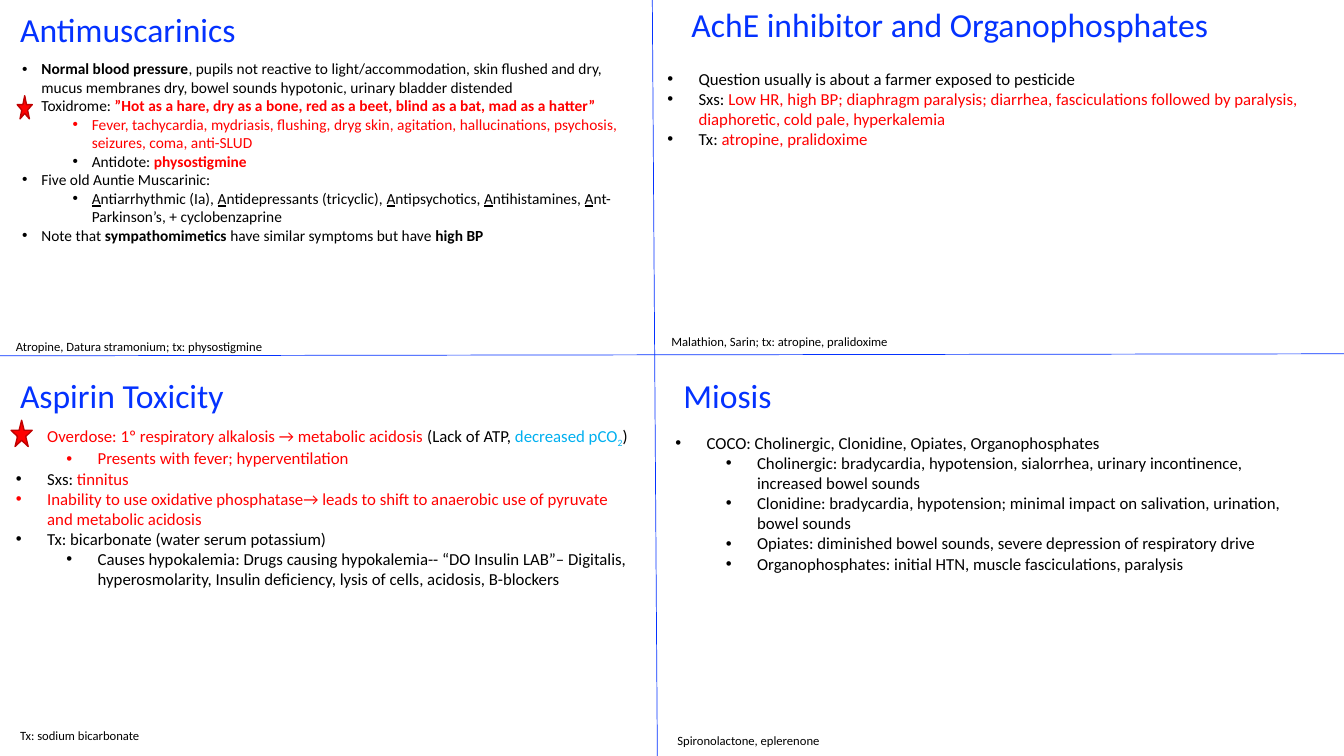
"""Build a four-quadrant toxicology review slide."""
import pptx
import pptx.dml.color
import pptx.enum.shapes
import pptx.enum.text
import pptx.oxml
import pptx.oxml.ns
import pptx.util
from lxml import etree
from pptx.util import Inches

FONT = "Calibri"
BLUE, BLACK, RED, DARK_RED, SKY = "0432FF", "000000", "FF0000", "C00000", "00B0F0"
STYLES = {
    "plain": {},
    "bold": {"bold": True},
    "underline": {"underline": True},
    "red": {"color": RED},
    "red bold": {"color": RED, "bold": True},
    "sky": {"color": SKY},
    "sky subscript": {"color": SKY, "baseline": -25000},
}

ANTIMUSCARINICS = [
    (0, [("Normal blood pressure", "bold"),
         (", pupils not reactive to light/accommodation, skin flushed and dry, mucus membranes dry, "
          "bowel sounds hypotonic, urinary bladder distended", "plain")]),
    (0, [("Toxidrome: ", "plain"),
         ("”Hot as a hare, dry as a bone, red as a beet, blind as a bat, mad as a hatter”", "red bold")]),
    (1, [("Fever, tachycardia, mydriasis, flushing, dryg skin, agitation, hallucinations, psychosis, "
          "seizures, coma, anti-SLUD", "red")]),
    (1, [("Antidote: ", "plain"), ("physostigmine", "red bold")]),
    (0, [("Five old Auntie Muscarinic:", "plain")]),
    (1, [("A", "underline"), ("ntiarrhythmic (Ia), ", "plain"),
         ("A", "underline"), ("ntidepressants (tricyclic), ", "plain"),
         ("A", "underline"), ("ntipsychotics, ", "plain"),
         ("A", "underline"), ("ntihistamines, ", "plain"),
         ("A", "underline"), ("nt-Parkinson’s, + cyclobenzaprine", "plain")]),
    (0, [("Note that ", "plain"), ("sympathomimetics", "bold"),
         (" have similar symptoms but have ", "plain"), ("high BP", "bold")]),
]
ORGANOPHOSPHATES = [
    (0, [("Question usually is about a farmer exposed to pesticide", "plain")]),
    (0, [("Sxs: ", "plain"),
         ("Low HR, high BP; diaphragm paralysis; diarrhea, fasciculations followed by paralysis, "
          "diaphoretic, cold pale, hyperkalemia", "red")]),
    (0, [("Tx: ", "plain"), ("atropine, pralidoxime", "red")]),
]
ASPIRIN = [
    (0, [("Overdose: 1º respiratory alkalosis → metabolic acidosis ", "red"), ("(Lack of ATP, ", "plain"),
         ("decreased pCO", "sky"), ("2", "sky subscript"), (")", "plain")]),
    (1, [("Presents with fever; hyperventilation", "red")]),
    (0, [("Sxs: ", "plain"), ("tinnitus", "red")]),
    (0, [("Inability to use oxidative phosphatase→ leads to shift to anaerobic use of pyruvate "
          "and metabolic acidosis", "red")]),
    (0, [("Tx: bicarbonate (water serum potassium)", "plain")]),
    (1, [("Causes hypokalemia: Drugs causing hypokalemia-- “DO Insulin LAB”– Digitalis, hyperosmolarity, "
          "Insulin deficiency, lysis of cells, acidosis, B-blockers", "plain")]),
]
MIOSIS = [
    (0, [("COCO: Cholinergic, Clonidine, Opiates, Organophosphates", "plain")]),
    (1, [("Cholinergic: bradycardia, hypotension, sialorrhea, urinary incontinence, "
          "increased bowel sounds", "plain")]),
    (1, [("Clonidine: bradycardia, hypotension; minimal impact on salivation, urination, "
          "bowel sounds", "plain")]),
    (1, [("Opiates: diminished bowel sounds, severe depression of respiratory drive", "plain")]),
    (1, [("Organophosphates: initial HTN, muscle fasciculations, paralysis", "plain")]),
]

QUADRANTS = [
    {"title": ("Antimuscarinics", (0.1, 0.04, 5.81, 0.5)),
     "list": (ANTIMUSCARINICS, (0.12, 0.54, 6.26, 2.14)), "size": 11, "hanging": 0.19,
     "footer": ("Atropine, Datura stramonium; tx: physostigmine", (0.06, 3.31, 6.24, 0.25))},
    {"title": ("AchE inhibitor and Organophosphates", (6.76, -0.01, 6.31, 0.5)),
     "list": (ORGANOPHOSPHATES, (6.52, 0.63, 6.82, 0.91)), "size": 12, "hanging": 0.31,
     "footer": ("Malathion, Sarin; tx: atropine, pralidoxime", (6.56, 3.26, 4.47, 0.25))},
    {"title": ("Aspirin Toxicity", (0.1, 3.67, 3.62, 0.5)),
     "list": (ASPIRIN, (0.06, 4.17, 6.32, 2.12)), "size": 12, "hanging": 0.31,
     "footer": ("Tx: sodium bicarbonate", (0.1, 7.17, 2.49, 0.25))},
    {"title": ("Miosis", (6.68, 3.67, 3.8, 0.5)),
     "list": (MIOSIS, (6.6, 4.24, 6.35, 1.72)), "size": 12, "hanging": 0.31,
     "footer": ("Spironolactone, eplerenone", (6.62, 7.22, 2.3, 0.25))},
]
DIVIDERS = [(6.47, 0, 6.52, 7.5), (0, 3.53, 13.33, 3.51)]
STARS = [(0.17, 0.95, 0.15, 0.23), (0.11, 4.17, 0.21, 0.26)]


def rgb(color):
    return pptx.dml.color.RGBColor.from_string(color)


def place_text(slide, box, placeholder=None):
    left, top, width, height = map(Inches, box)
    shape = placeholder or slide.shapes.add_textbox(left, top, width, height)
    shape.left, shape.top, shape.width, shape.height = left, top, width, height
    frame = shape.text_frame
    frame.word_wrap = True
    frame.auto_size = pptx.enum.text.MSO_AUTO_SIZE.SHAPE_TO_FIT_TEXT
    frame.vertical_anchor = pptx.enum.text.MSO_ANCHOR.TOP
    return frame


def format_paragraph(paragraph, size):
    paragraph.alignment = pptx.enum.text.PP_ALIGN.LEFT
    paragraph.space_before = pptx.util.Pt(0)
    paragraph.font.name = FONT
    paragraph.font.size = pptx.util.Pt(size)


def add_line(slide, text, box, size, color, placeholder=None):
    paragraph = place_text(slide, box, placeholder).paragraphs[0]
    paragraph.text = text
    format_paragraph(paragraph, size)
    paragraph.font.color.rgb = rgb(color)


def add_bullet(paragraph, level, hanging):
    paragraph.level = level
    properties = paragraph._p.get_or_add_pPr()
    properties.set("marL", str(Inches(0.5 * level + hanging)))
    properties.set("indent", str(-Inches(hanging)))
    font = etree.SubElement(properties, pptx.oxml.ns.qn("a:buFont"))
    font.set("typeface", "Arial")
    bullet = etree.SubElement(properties, pptx.oxml.ns.qn("a:buChar"))
    bullet.set("char", "•")


def add_run(paragraph, text, color=BLACK, bold=False, underline=False, baseline=0):
    run = paragraph.add_run()
    run.text = text
    run.font.color.rgb = rgb(color)
    if bold:
        run.font.bold = True
    if underline:
        run.font.underline = True
    if baseline:
        run._r.get_or_add_rPr().set("baseline", str(baseline))


def add_list(slide, items, box, size, hanging, placeholder=None):
    frame = place_text(slide, box, placeholder)
    for index, (level, runs) in enumerate(items):
        paragraph = frame.add_paragraph() if index else frame.paragraphs[0]
        add_bullet(paragraph, level, hanging)
        format_paragraph(paragraph, size)
        for text, style in runs:
            add_run(paragraph, text, **STYLES[style])


def add_divider(slide, ends):
    line = slide.shapes.add_connector(pptx.enum.shapes.MSO_CONNECTOR.STRAIGHT, *map(Inches, ends))
    line.line.color.rgb = rgb(BLUE)
    line.line.width = pptx.util.Pt(0.5)
    etree.SubElement(line._element.spPr, pptx.oxml.ns.qn("a:effectLst"))


def add_star(slide, box):
    star = slide.shapes.add_shape(pptx.enum.shapes.MSO_SHAPE.STAR_5_POINT, *map(Inches, box))
    star.shadow.inherit = False
    star.fill.solid()
    star.fill.fore_color.rgb = rgb(RED)
    star.line.color.rgb = rgb(DARK_RED)
    star.line.width = pptx.util.Pt(1)


def main():
    presentation = pptx.Presentation()
    presentation.slide_width, presentation.slide_height = Inches(13.33), Inches(7.5)
    slide = presentation.slides.add_slide(presentation.slide_layouts[1])
    title, body = slide.placeholders
    for ends in DIVIDERS:
        add_divider(slide, ends)
    for index, quadrant in enumerate(QUADRANTS):
        first = index == 0
        add_line(slide, *quadrant["title"], 24, BLUE, title if first else None)
        add_list(slide, *quadrant["list"], quadrant["size"], quadrant["hanging"], body if first else None)
        add_line(slide, *quadrant["footer"], 9, BLACK)
    for box in STARS:
        add_star(slide, box)
    presentation.save("out.pptx")


if __name__ == "__main__":
    main()
